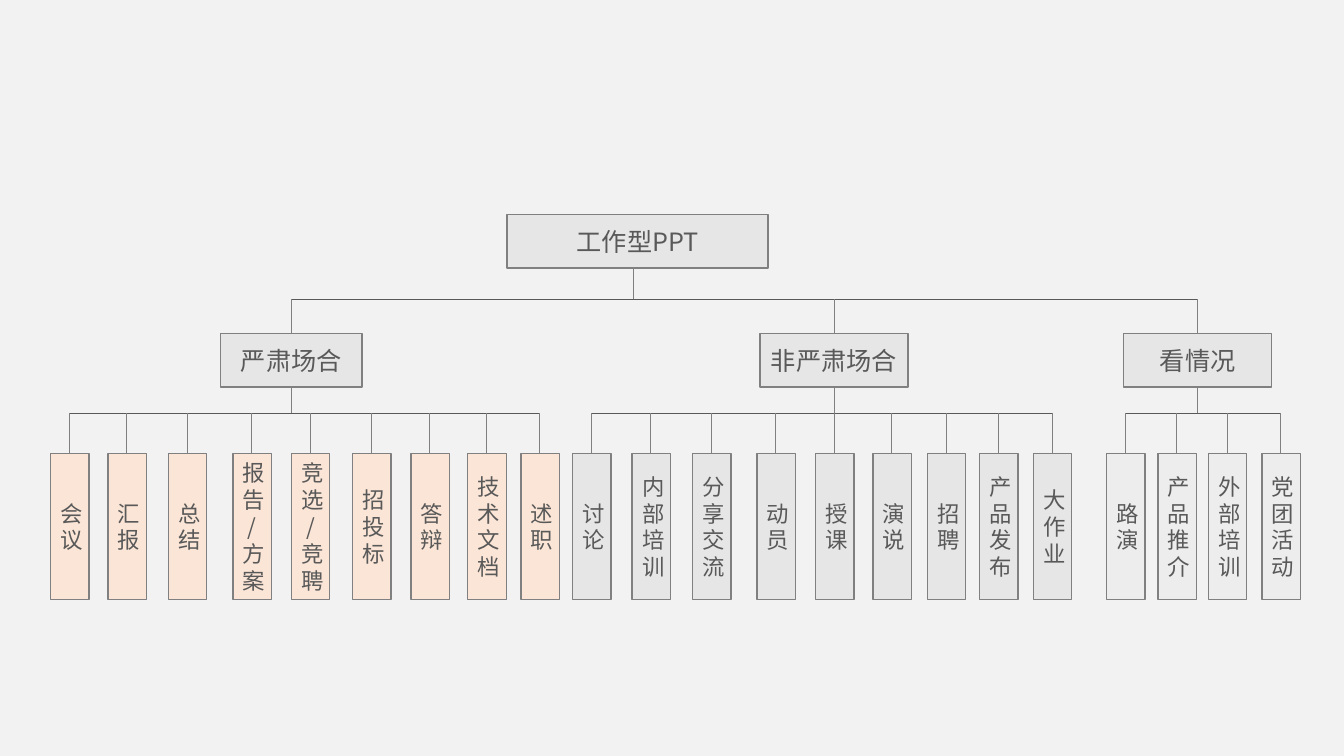
from dataclasses import dataclass

from lxml import etree
from pptx import Presentation
from pptx.dml.color import RGBColor
from pptx.enum.shapes import MSO_CONNECTOR, MSO_SHAPE
from pptx.enum.text import MSO_ANCHOR, PP_ALIGN
from pptx.oxml.ns import qn
from pptx.util import Cm, Pt

RECT = MSO_SHAPE.RECTANGLE
LINE = MSO_CONNECTOR.STRAIGHT
MIDDLE = MSO_ANCHOR.MIDDLE
CENTER = PP_ALIGN.CENTER


@dataclass(frozen=True)
class Theme:
    font: str = "Noto Sans CJK SC"
    back: str = "F2F2F2"
    gray: str = "E7E6E6"
    pale: str = "EDEDED"
    peach: str = "FBE5D6"
    edge: str = "808080"
    ink: str = "595959"
    large: int = 18
    small: int = 16
    thick: float = 1
    thin: float = 0.5


class Chart:
    def __init__(self, slide, theme):
        self.slide = slide
        self.theme = theme
        fill = slide.background.fill
        fill.solid()
        fill.fore_color.rgb = RGBColor.from_string(theme.back)

    def box(self, text, left, top, width, height, color, size):
        theme = self.theme
        shape = self.slide.shapes.add_shape(
            RECT, Cm(left), Cm(top), Cm(width), Cm(height))
        shape.shadow.inherit = False
        shape.fill.solid()
        shape.fill.fore_color.rgb = RGBColor.from_string(color)
        shape.line.color.rgb = RGBColor.from_string(theme.edge)
        shape.line.width = Pt(theme.thick)
        frame = shape.text_frame
        frame.text = text
        frame.word_wrap = True
        frame.vertical_anchor = MIDDLE
        line = frame.paragraphs[0]
        line.alignment = CENTER
        run = line.runs[0]
        run.font.size = Pt(size)
        run.font.color.rgb = RGBColor.from_string(theme.ink)
        run.font.name = theme.font
        east = etree.SubElement(run._r.get_or_add_rPr(), qn("a:ea"))
        east.set("typeface", theme.font)

    def line(self, x1, y1, x2, y2, color):
        link = self.slide.shapes.add_connector(
            LINE, Cm(x1), Cm(y1), Cm(x2), Cm(y2))
        link.line.color.rgb = RGBColor.from_string(color)
        link.line.width = Pt(self.theme.thin)
        etree.SubElement(link._element.spPr, qn("a:effectLst"))

    def stem(self, x, top, end):
        self.line(x, top, x, end, self.theme.edge)

    def rail(self, left, right, y):
        self.line(left, y, right, y, self.theme.ink)


HEAD_H = 1.35
ROOT_TOP, ROOT_X = 5.41, 15.95
HUB_RAIL, HUB_TOP = 7.54, 8.4
LEAF_RAIL, LEAF_TOP = 10.41, 11.43
LEAF_W, LEAF_H = 0.97, 3.68
DROP = 0.47

GROUPS = [
    ("严肃场合", 5.56, 3.56, Theme.peach, [
        ("会议", 1.27), ("汇报", 2.72), ("总结", 4.24),
        ("报告/方案", 5.87), ("竞选/竞聘", 7.34), ("招投标", 8.89),
        ("答辩", 10.36), ("技术文档", 11.79), ("述职", 13.13)]),
    ("非严肃场合", 19.15, 3.73, Theme.gray, [
        ("讨论", 14.43), ("内部培训", 15.93), ("分享交流", 17.45),
        ("动员", 19.08), ("授课", 20.55), ("演说", 22),
        ("招聘", 23.37), ("产品发布", 24.69), ("大作业", 26.04)]),
    ("看情况", 28.32, 3.73, Theme.pale, [
        ("路演", 27.89), ("产品推介", 29.18),
        ("外部培训", 30.45), ("党团活动", 31.8)]),
]


def main():
    deck = Presentation()
    deck.slide_width, deck.slide_height = Cm(33.87), Cm(19.05)
    theme = Theme()
    chart = Chart(deck.slides.add_slide(deck.slide_layouts[6]), theme)

    chart.box("工作型PPT", 12.78, ROOT_TOP, 6.58, HEAD_H, theme.gray, theme.large)
    chart.stem(ROOT_X, ROOT_TOP + HEAD_H, HUB_RAIL)
    hubs = [left + width / 2 for _, left, width, _, _ in GROUPS]
    chart.rail(hubs[0], hubs[-1], HUB_RAIL)

    for hub, (title, left, width, color, leaves) in zip(hubs, GROUPS):
        chart.stem(hub, HUB_RAIL, HUB_TOP)
        chart.box(title, left, HUB_TOP, width, HEAD_H, theme.gray, theme.large)
        chart.stem(hub, HUB_TOP + HEAD_H, LEAF_RAIL)
        chart.rail(leaves[0][1] + DROP, leaves[-1][1] + DROP, LEAF_RAIL)
        for text, x in leaves:
            chart.stem(x + DROP, LEAF_RAIL, LEAF_TOP)
            chart.box(text, x, LEAF_TOP, LEAF_W, LEAF_H, color, theme.small)

    deck.save("out.pptx")


if __name__ == "__main__":
    main()
